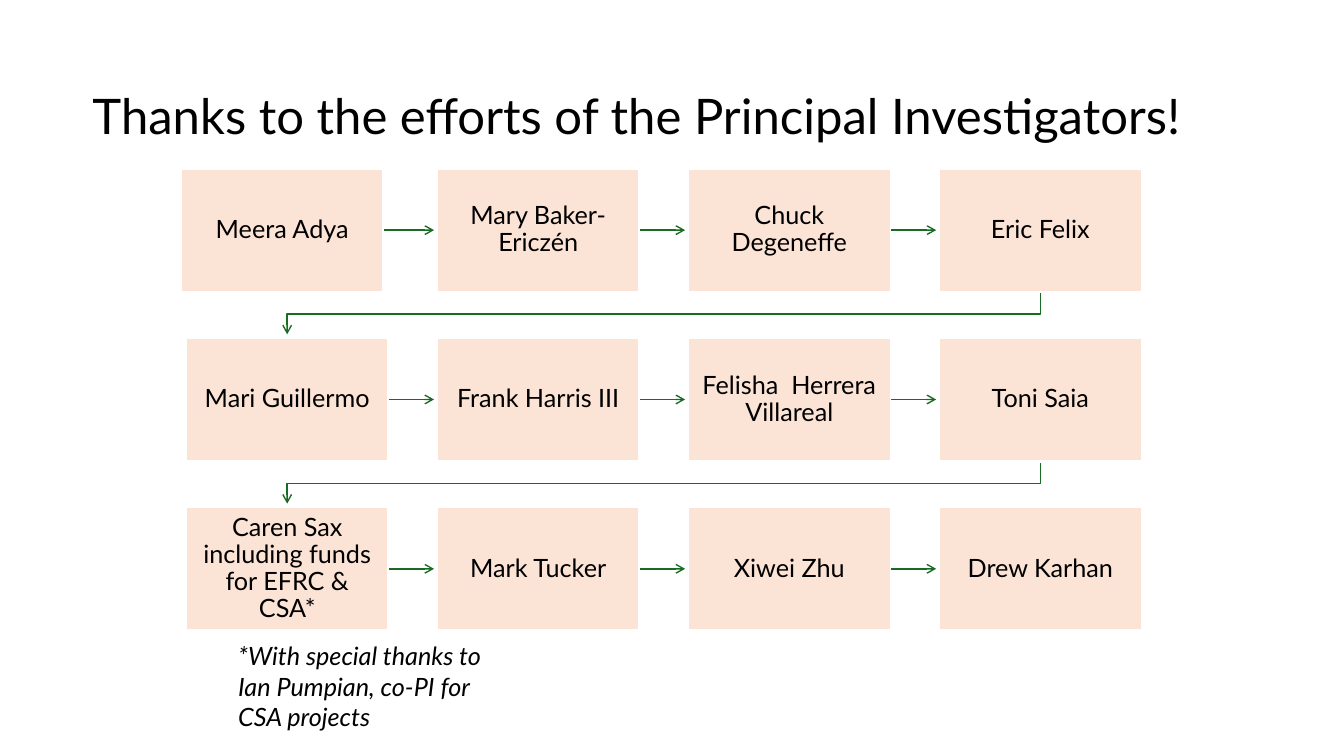
from dataclasses import dataclass

from lxml.etree import SubElement
from pptx import Presentation
from pptx.dml.color import RGBColor
from pptx.enum.shapes import MSO_CONNECTOR, MSO_SHAPE
from pptx.enum.text import MSO_ANCHOR, PP_ALIGN
from pptx.oxml.ns import qn
from pptx.shapes.autoshape import Shape
from pptx.shapes.connector import Connector
from pptx.slide import Slide
from pptx.util import Inches, Pt

COLORS = {"text": "000000", "box": "FBE3D6", "border": "FFFFFF", "arrow": "196B24"}
FONT = "Lato"
LEFT, TOP = 1.84, 1.67
COLUMN, ROW = 2.49, 1.68
BOX_W, BOX_H = 0.81, 0.73
ARROW_END = 0.99
TURN, DROP_END = 0.86, 0.98


@dataclass(frozen=True)
class Label:
    text: str
    col: float
    row: float
    width: float
    height: float
    size: int = 18
    italic: bool = False
    anchor: MSO_ANCHOR = MSO_ANCHOR.TOP
    align: PP_ALIGN = PP_ALIGN.LEFT
    spacing: float = 1.0


@dataclass(frozen=True)
class Investigator:
    name: str
    col: int
    row: int
    shift: float = 0

    def label(self) -> Label:
        return Label(self.name, self.col + self.shift, self.row, BOX_W, BOX_H,
                     anchor=MSO_ANCHOR.MIDDLE, align=PP_ALIGN.CENTER, spacing=0.9)


NAMES = [
    ["Meera Adya", "Mary Baker-Ericzén", "Chuck Degeneffe", "Eric Felix"],
    ["Mari Guillermo", "Frank Harris III", "Felisha  Herrera Villareal", "Toni Saia"],
    ["Caren Sax including funds for EFRC & CSA*", "Mark Tucker", "Xiwei Zhu", "Drew Karhan"],
]
LAST_COL = len(NAMES[0]) - 1
INVESTIGATORS = [
    Investigator(name, col, row, -0.02 if row == col == 0 else 0)
    for row, names in enumerate(NAMES)
    for col, name in enumerate(names)
]
TITLE = Label("Thanks to the efforts of the Principal Investigators!", -0.41, -0.82, 4.77, 0.71,
              size=35, anchor=MSO_ANCHOR.BOTTOM, spacing=0.9)
NOTE = Label("*With special thanks to\nIan Pumpian, co-PI for CSA projects", 0.17, 2.76, 1.16, 0.6,
             italic=True)


def color(name: str) -> RGBColor:
    return RGBColor.from_string(COLORS[name])


def x(col: float) -> int:
    return Inches(LEFT + col * COLUMN)


def y(row: float) -> int:
    return Inches(TOP + row * ROW)


def frame(label: Label) -> tuple[int, int, int, int]:
    return (x(label.col), y(label.row),
            Inches(label.width * COLUMN), Inches(label.height * ROW))


def write(sp: Shape, label: Label) -> None:
    tf = sp.text_frame
    tf.word_wrap = True
    tf.vertical_anchor = label.anchor
    tf.text = label.text
    for p in tf.paragraphs:
        p.alignment = label.align
        p.line_spacing = label.spacing
        for r in p.runs:
            r.font.name = FONT
            r.font.size = Pt(label.size)
            r.font.italic = label.italic
            r.font.color.rgb = color("text")


def add_label(s: Slide, label: Label) -> None:
    write(s.shapes.add_textbox(*frame(label)), label)


def add_box(s: Slide, person: Investigator) -> Shape:
    label = person.label()
    sp = s.shapes.add_shape(MSO_SHAPE.RECTANGLE, *frame(label))
    sp.shadow.inherit = False
    sp.fill.solid()
    sp.fill.fore_color.rgb = color("box")
    sp.line.color.rgb = color("border")
    sp.line.width = Pt(2)
    write(sp, label)
    return sp


def style_arrow(sp: Shape | Connector) -> None:
    sp.line.color.rgb = color("arrow")
    sp.line.width = Pt(1)
    SubElement(sp.line._get_or_add_ln(), qn("a:tailEnd"), type="arrow")


def add_arrow(s: Slide, box: Shape, person: Investigator) -> None:
    middle = y(person.row + BOX_H / 2)
    sp = s.shapes.add_connector(MSO_CONNECTOR.STRAIGHT, box.left + box.width, middle,
                                x(person.col + ARROW_END), middle)
    sp.begin_connect(box, 3)
    style_arrow(sp)
    SubElement(sp._element.spPr, qn("a:effectLst"))


def add_row_turn(s: Slide, row: int) -> None:
    start, end = x(LAST_COL + BOX_W / 2), x(BOX_W / 2)
    builder = s.shapes.build_freeform(start, y(row + BOX_H))
    builder.add_line_segments(
        [(start, y(row + TURN)), (end, y(row + TURN)), (end, y(row + DROP_END))], close=False)
    sp = builder.convert_to_shape()
    sp.shadow.inherit = False
    sp.fill.background()
    style_arrow(sp)


def main() -> None:
    prs = Presentation()
    prs.slide_width, prs.slide_height = Inches(13.33), Inches(7.5)
    s = prs.slides.add_slide(prs.slide_layouts[6])
    add_label(s, TITLE)
    for row in range(len(NAMES) - 1):
        add_row_turn(s, row)
    for person in INVESTIGATORS:
        box = add_box(s, person)
        if person.col < LAST_COL:
            add_arrow(s, box, person)
    add_label(s, NOTE)
    prs.save("out.pptx")


if __name__ == "__main__":
    main()
